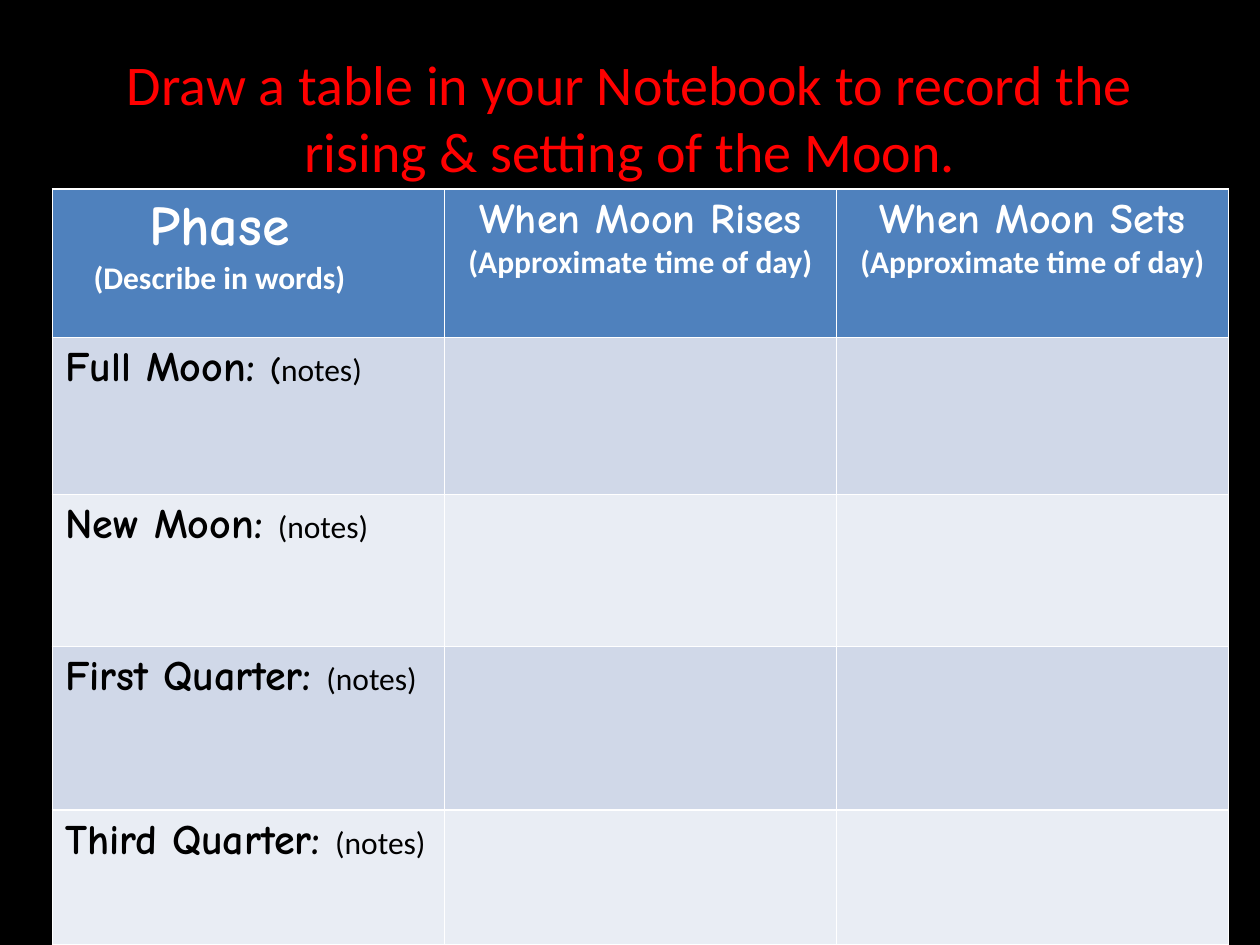
from pptx import Presentation
from pptx.dml.color import RGBColor
from pptx.enum import text
from pptx.util import Pt

BLACK = RGBColor(0x00, 0x00, 0x00)
WHITE = RGBColor(0xFF, 0xFF, 0xFF)
RED = RGBColor(0xFF, 0x00, 0x00)
HEADER_BLUE = RGBColor(0x4F, 0x81, 0xBD)
BANDS = (RGBColor(0xD0, 0xD8, 0xE8), RGBColor(0xE9, 0xED, 0xF4))

BODY_FONT = "Calibri"
HAND_FONT = "Comic Neue"
TIME_NOTE = "(Approximate time of day)"
# Heading, its size, the note below it, and the right indent of the heading
HEADINGS = (
    ("Phase", 32, "(Describe in words)", 33),
    ("When Moon Rises", 24, TIME_NOTE, 0),
    ("When Moon Sets", 24, TIME_NOTE, 0),
)
# Phase, and the part of the note that is in the hand font
PHASES = (("Full Moon: ", "("), ("New Moon: ", ""),
          ("First Quarter: ", ""), ("Third Quarter: ", ""))
ROW_HEIGHTS = (85, 89.5, 87, 93.5, 77)


def add_run(paragraph, wording, color, **formats):
    run = paragraph.add_run()
    run.text = wording
    run.font.color.rgb = color
    for name, value in formats.items():
        setattr(run.font, name, value)


def fill_solid(cell, color):
    cell.fill.solid()
    cell.fill.fore_color.rgb = color


def place_title(slide, left, top, width, height):
    title = slide.shapes.title
    box = {"left": left, "top": top, "width": width, "height": height}
    for name, value in box.items():
        setattr(title, name, Pt(value))
    frame = title.text_frame
    frame.vertical_anchor = text.MSO_ANCHOR.MIDDLE
    paragraph = frame.paragraphs[0]
    paragraph.alignment = text.PP_ALIGN.CENTER
    add_run(paragraph,
            "Draw a table in your Notebook to record the rising & setting of the Moon.",
            RED, name=BODY_FONT, size=Pt(32))


def fill_heading(cell, heading, size, note, indent):
    fill_solid(cell, HEADER_BLUE)
    frame = cell.text_frame
    first, second = frame.paragraphs[0], frame.add_paragraph()
    for paragraph in (first, second):
        paragraph.alignment = text.PP_ALIGN.CENTER
    if indent:
        first._p.get_or_add_pPr().set("marR", str(Pt(indent)))
    add_run(first, heading, WHITE, name=HAND_FONT, size=Pt(size), bold=True)
    add_run(second, note, WHITE, name=BODY_FONT, size=Pt(18), bold=True)


def fill_phase(cell, phase, opening):
    paragraph = cell.text_frame.paragraphs[0]
    add_run(paragraph, phase, BLACK, name=HAND_FONT, size=Pt(24), bold=True)
    if opening:
        add_run(paragraph, opening, BLACK, name=HAND_FONT, size=Pt(18), bold=True)
    add_run(paragraph, "(notes)".removeprefix(opening), BLACK,
            name=BODY_FONT, size=Pt(18), bold=False)


def place_moon_table(slide, left, top, width, height):
    """Add the table; its default style draws the white borders."""
    table = slide.shapes.add_table(
        len(PHASES) + 1, len(HEADINGS), Pt(left), Pt(top), Pt(width), Pt(height)).table
    for row, row_height in zip(table.rows, ROW_HEIGHTS):
        row.height = Pt(row_height)
    for column, heading in enumerate(HEADINGS):
        fill_heading(table.cell(0, column), *heading)
    for index, phase in enumerate(PHASES):
        cells = table.rows[index + 1].cells
        for cell in cells:
            fill_solid(cell, BANDS[index % 2])
        fill_phase(cells[0], *phase)


def main():
    presentation = Presentation()
    presentation.slide_width, presentation.slide_height = Pt(720), Pt(540)
    slide = presentation.slides.add_slide(presentation.slide_layouts[5])
    background = slide.background.fill
    background.solid()
    background.fore_color.rgb = BLACK
    place_title(slide, 36, 21.6, 648, 90)
    place_moon_table(slide, 30, 108, 672, sum(ROW_HEIGHTS))
    presentation.save("out.pptx")


if __name__ == "__main__":
    main()
